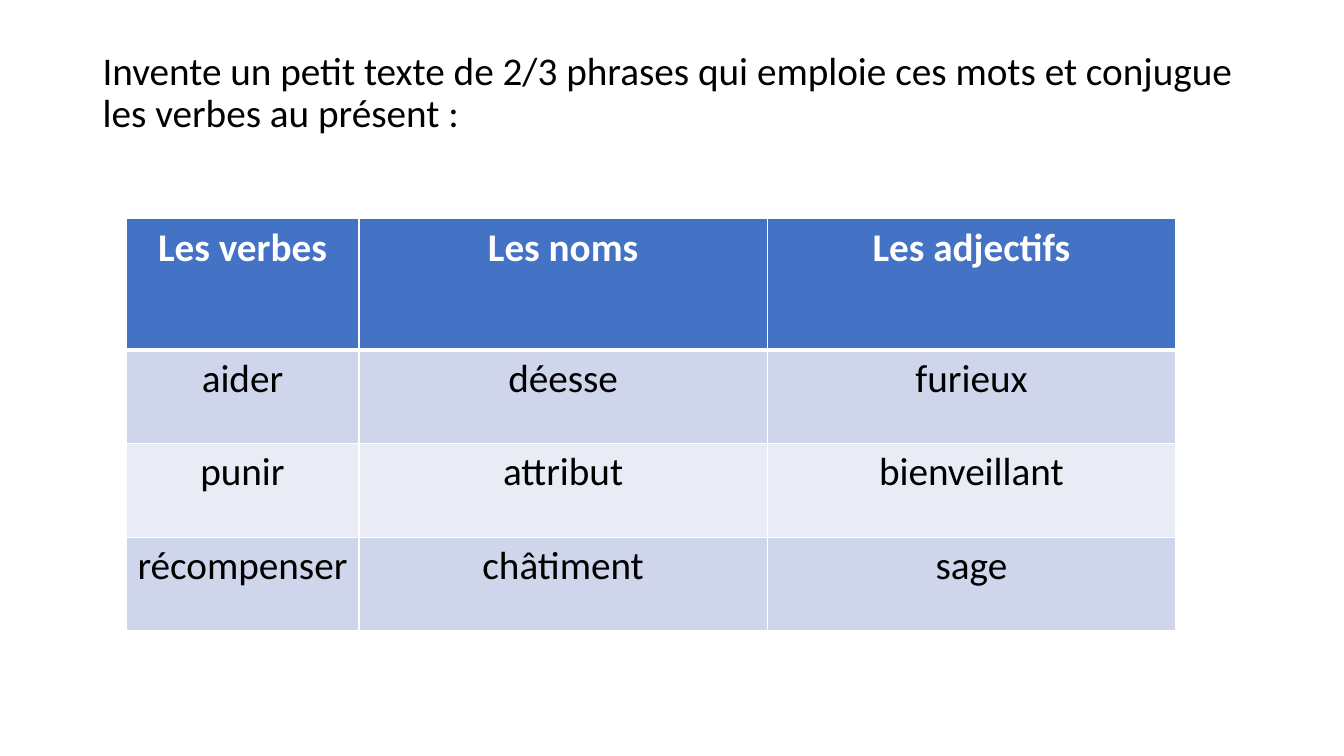
from dataclasses import dataclass

from lxml.etree import SubElement
from pptx import Presentation
from pptx.dml.color import RGBColor
from pptx.enum.text import MSO_ANCHOR as Anchor, PP_ALIGN as Align
from pptx.oxml.ns import qn
from pptx.slide import Slide
from pptx.table import _Cell as Cell
from pptx.text.text import _Paragraph as Paragraph
from pptx.util import Emu, Pt

PX = 9144
FONT = "Calibri"
FONT_SIZE = 28
BLACK = RGBColor(0x00, 0x00, 0x00)
WHITE = RGBColor(0xFF, 0xFF, 0xFF)
HEADING_BLUE = RGBColor(0x44, 0x72, 0xC4)
BAND_DARK = RGBColor(0xCF, 0xD5, 0xEA)
BAND_LIGHT = RGBColor(0xE9, 0xEB, 0xF5)

INSTRUCTION = (
    "Invente un petit texte de 2/3 phrases qui emploie ces mots "
    "et conjugue les verbes au présent :"
)


@dataclass(frozen=True)
class WordRow:
    words: tuple[str, str, str]
    height: int
    fill: RGBColor
    color: RGBColor = BLACK
    bold: bool = False
    top_border: int = 1
    bottom_border: int = 1


COLUMN_WIDTHS = (231, 405, 405)
WORD_ROWS = (
    WordRow(("Les verbes", "Les noms", "Les adjectifs"), 130, HEADING_BLUE,
            WHITE, bold=True, bottom_border=3),
    WordRow(("aider", "déesse", "furieux"), 93, BAND_DARK, top_border=3),
    WordRow(("punir", "attribut", "bienveillant"), 93, BAND_LIGHT),
    WordRow(("récompenser", "châtiment", "sage"), 93, BAND_DARK),
)


def px(length: int) -> Emu:
    return Emu(length * PX)


def style_text(paragraph: Paragraph, color: RGBColor, bold: bool = False) -> None:
    for run in paragraph.runs:
        run.font.name = FONT
        run.font.size = Pt(FONT_SIZE)
        run.font.bold = bold
        run.font.color.rgb = color


def add_border(cell: Cell, side: str, width: int) -> None:
    properties = cell._tc.get_or_add_tcPr()
    border = SubElement(properties, qn(f"a:ln{side}"), w=str(Pt(width)))
    fill = SubElement(border, qn("a:solidFill"))
    SubElement(fill, qn("a:srgbClr"), val=str(WHITE))


def fill_cell(cell: Cell, word: str, row: WordRow) -> None:
    cell.text = word
    paragraph = cell.text_frame.paragraphs[0]
    paragraph.alignment = Align.CENTER
    style_text(paragraph, row.color, row.bold)
    borders = {"L": 1, "R": 1, "T": row.top_border, "B": row.bottom_border}
    for side, width in borders.items():
        add_border(cell, side, width)
    cell.fill.solid()
    cell.fill.fore_color.rgb = row.fill


def add_instruction(slide: Slide) -> None:
    instruction = slide.shapes.add_textbox(px(92), px(40), px(1150), px(106))
    frame = instruction.text_frame
    frame.word_wrap = True
    frame.vertical_anchor = Anchor.MIDDLE
    frame.text = INSTRUCTION
    paragraph = frame.paragraphs[0]
    paragraph.line_spacing = 0.9
    style_text(paragraph, BLACK)


def add_word_table(slide: Slide) -> None:
    height = sum(row.height for row in WORD_ROWS)
    word_table = slide.shapes.add_table(
        len(WORD_ROWS), len(COLUMN_WIDTHS),
        px(125), px(217), px(sum(COLUMN_WIDTHS)), px(height),
    ).table
    for column, width in zip(word_table.columns, COLUMN_WIDTHS):
        column.width = px(width)
    for table_row, row in zip(word_table.rows, WORD_ROWS):
        table_row.height = px(row.height)
        for cell, word in zip(table_row.cells, row.words):
            fill_cell(cell, word, row)


def main() -> None:
    presentation = Presentation()
    presentation.slide_width = px(1333)
    presentation.slide_height = px(750)
    slide = presentation.slides.add_slide(presentation.slide_layouts[6])
    add_instruction(slide)
    add_word_table(slide)
    presentation.save("out.pptx")


if __name__ == "__main__":
    main()
